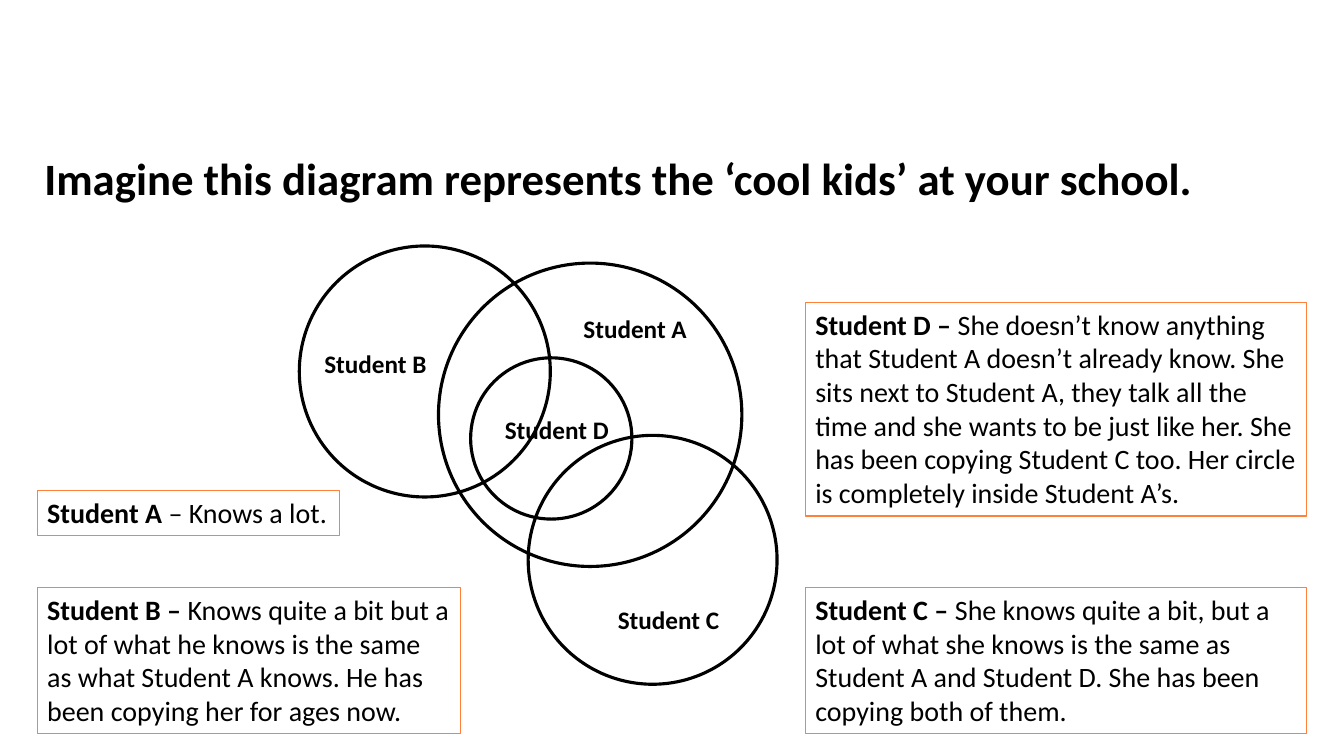
from dataclasses import dataclass

from pptx import Presentation
from pptx import util as u
from pptx.dml.color import RGBColor
from pptx.enum import shapes, text

COLOURS = {"ink": "000000", "box": "FF8039"}
FONT = "Calibri"
LEFT_COLUMN, RIGHT_COLUMN = 26.6, 575.3
BOTTOM_ROW = 419.8


@dataclass
class Note:
    student: str
    dash: str
    description: str
    left: float
    top: float
    width: float
    height: float


@dataclass
class Circle:
    left: float
    top: float
    diameter: float


@dataclass
class Label:
    student: str
    left: float
    top: float
    width: float = 141.1
    height: float = 28.8


NOTES = [
    Note("Student A ", "", "– Knows a lot.", LEFT_COLUMN, 350.6, 216, 31.7),
    Note("Student B ", "– ",
         "Knows quite a bit but a lot of what he knows is the same as what "
         "Student A knows. He has been copying her for ages now.",
         LEFT_COLUMN, BOTTOM_ROW, 302.4, 104.4),
    Note("Student C ", "– ",
         "She knows quite a bit, but a lot of what she knows is the same as "
         "Student A and Student D. She has been copying both of them.",
         RIGHT_COLUMN, BOTTOM_ROW, 357.9, 104.4),
    Note("Student D ", "– ",
         "She doesn’t know anything that Student A doesn’t already know. She "
         "sits next to Student A, they talk all the time and she wants to be "
         "just like her. She has been copying Student C too. Her circle is "
         "completely inside Student A’s.",
         RIGHT_COLUMN, 216, 357.9, 152.6),
]
LABELS = [
    Label("Student B", 224.6, 245.5, width=124.6),
    Label("Student A", 409.7, 220.3),
    Label("Student C", 434.2, 428.4),
    Label("Student D", 353.5, 292.3),
]
CIRCLES = [
    Circle(313.2, 187.9, 216.7),
    Circle(213.8, 175.7, 179.3),
    Circle(336.2, 255.6, 115.2),
    Circle(377.3, 311, 177.8),
]


def colour(name: str) -> RGBColor:
    return RGBColor.from_string(COLOURS[name])


def add_text(shape, content: str, *, size: float, bold: bool = False) -> None:
    """Append a formatted run to the first paragraph of a shape."""
    frame = shape.text_frame
    frame.word_wrap = True
    frame.auto_size = text.MSO_AUTO_SIZE.NONE
    frame.vertical_anchor = text.MSO_ANCHOR.TOP
    paragraph = frame.paragraphs[0]
    paragraph.alignment = text.PP_ALIGN.LEFT
    run = paragraph.add_run()
    run.text = content
    run.font.name = FONT
    run.font.size = u.Pt(size)
    run.font.bold = bold
    run.font.color.rgb = colour("ink")


def add_outline(slide, kind, left: float, top: float, width: float,
                height: float, *, line: str, weight: float):
    shape = slide.shapes.add_shape(
        kind, u.Pt(left), u.Pt(top), u.Pt(width), u.Pt(height))
    shape.shadow.inherit = False
    shape.fill.background()
    shape.line.color.rgb = colour(line)
    shape.line.width = u.Pt(weight)
    return shape


def add_title(slide, content: str) -> None:
    title = slide.shapes.title
    title.left, title.top = u.Pt(24.5), u.Pt(103.7)
    title.width, title.height = u.Pt(842.4), u.Pt(46.1)
    add_text(title, content, size=32, bold=True)


def add_note(slide, note: Note) -> None:
    shape = add_outline(slide, shapes.MSO_SHAPE.RECTANGLE, note.left, note.top,
                        note.width, note.height, line="box", weight=0.75)
    add_text(shape, note.student + note.dash, size=20, bold=True)
    add_text(shape, note.description, size=20)


def add_label(slide, label: Label) -> None:
    shape = slide.shapes.add_textbox(u.Pt(label.left), u.Pt(label.top),
                                     u.Pt(label.width), u.Pt(label.height))
    add_text(shape, label.student, size=18, bold=True)


def add_circle(slide, circle: Circle) -> None:
    add_outline(slide, shapes.MSO_SHAPE.OVAL, circle.left, circle.top,
                circle.diameter, circle.diameter, line="ink", weight=2.25)


def main() -> None:
    presentation = Presentation()
    presentation.slide_width, presentation.slide_height = u.Pt(960), u.Pt(540)
    slide = presentation.slides.add_slide(presentation.slide_layouts[5])

    # Heading
    add_title(slide, "Imagine this diagram represents the ‘cool kids’ at your school.")

    # Descriptions of the students
    for note in NOTES:
        add_note(slide, note)

    # Overlapping circles and their labels
    for label in LABELS:
        add_label(slide, label)
    for circle in CIRCLES:
        add_circle(slide, circle)

    presentation.save("out.pptx")


if __name__ == "__main__":
    main()
